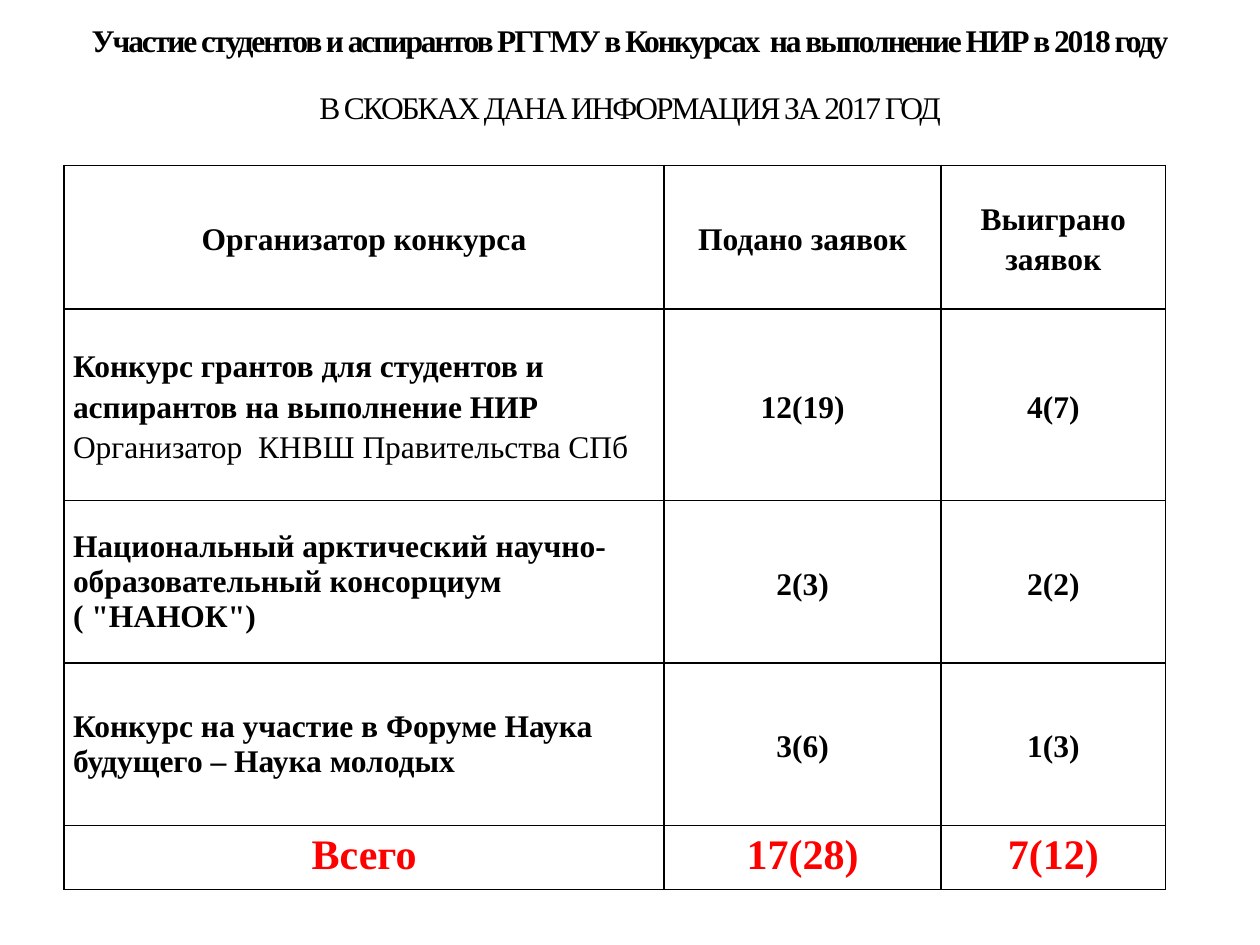
import pptx
import pptx.util
import pptx.dml.color
import pptx.enum.text
import pptx.oxml
import pptx.oxml.ns

ALIGN = pptx.enum.text.PP_ALIGN
MIDDLE = pptx.enum.text.MSO_ANCHOR.MIDDLE
TOP = pptx.enum.text.MSO_ANCHOR.TOP

WIDTHS = [4.76, 2.2, 1.78]
HEIGHTS = [1.14, 1.52, 1.29, 1.29, 0.51]
ROWS = [
    ["Организатор конкурса", "Подано заявок", "Выиграно заявок"],
    ["Конкурс грантов для студентов и аспирантов на выполнение НИР", "12(19)", "4(7)"],
    ['Национальный арктический научно-образовательный консорциум ( "НАНОК")', "2(3)", "2(2)"],
    ["Конкурс на участие в Форуме Наука будущего – Наука молодых", "3(6)", "1(3)"],
    ["Всего", "17(28)", "7(12)"],
]


def tint(code):
    return pptx.dml.color.RGBColor.from_string(code)


def write(frame, text, size=18, bold=True, color="000000", align=ALIGN.CENTER,
          line=1.15, after=0, track=0, first=True):
    para = frame.paragraphs[0] if first else frame.add_paragraph()
    para.alignment = align
    para.line_spacing = line
    para.space_before = pptx.util.Pt(0)
    para.space_after = pptx.util.Pt(after)
    run = para.add_run()
    run.text = text
    font = run.font
    font.name = "Times New Roman"
    font.size = pptx.util.Pt(size)
    font.bold = bold
    font.color.rgb = tint(color)
    if track:
        run._r.get_or_add_rPr().set("spc", str(round(track * 100)))


class Deck:
    def __init__(self, wide, high):
        self.file = pptx.Presentation()
        self.file.slide_width = pptx.util.Inches(wide)
        self.file.slide_height = pptx.util.Inches(high)
        self.slide = self.file.slides.add_slide(self.file.slide_layouts[5])
        self.edge = "000000"

    def place(self, left, top, width, height):
        wide, high = self.file.slide_width, self.file.slide_height
        return [round(left * wide), round(top * high),
                round(width * wide), round(height * high)]

    def title(self, head, note, *box):
        shape = self.slide.shapes.title
        shape.left, shape.top, shape.width, shape.height = self.place(*box)
        frame = shape.text_frame
        frame.word_wrap = True
        frame.auto_size = pptx.enum.text.MSO_AUTO_SIZE.NONE
        frame.vertical_anchor = MIDDLE
        write(frame, head, line=0.9, after=18.6, track=-1.2)
        write(frame, note, line=0.9, track=-1.2, bold=False, first=False)

    def border(self, cell):
        props = cell._tc.get_or_add_tcPr()
        space = pptx.oxml.ns.nsdecls("a")
        for spot, side in enumerate(["lnL", "lnR", "lnT", "lnB"]):
            props.insert(spot, pptx.oxml.parse_xml(
                f'<a:{side} {space} w="12700"><a:solidFill>'
                f'<a:srgbClr val="{self.edge}"/></a:solidFill></a:{side}>'))

    def table(self, rows, widths, heights, *box):
        grid = self.slide.shapes.add_table(len(rows), len(widths), *self.place(*box)).table
        for col, width in zip(grid.columns, widths):
            col.width = pptx.util.Inches(width)
        for row, height in zip(grid.rows, heights):
            row.height = pptx.util.Inches(height)
        last = len(rows) - 1
        for r, row in enumerate(rows):
            for c, text in enumerate(row):
                cell = grid.cell(r, c)
                cell.fill.background()
                self.border(cell)
                cell.margin_left = cell.margin_right = pptx.util.Inches(0.07)
                cell.margin_top = cell.margin_bottom = 0
                cell.vertical_anchor = TOP if r == last else MIDDLE
                name = c == 0 and 0 < r < last
                write(cell.text_frame, text,
                      size=24 if r == last else 18,
                      color="FF0000" if r == last else "000000",
                      align=ALIGN.LEFT if name else ALIGN.CENTER,
                      line=1.0 if name and r > 1 else 1.15)
        return grid


def main():
    deck = Deck(10, 7.5)
    deck.title("Участие студентов и аспирантов РГГМУ в Конкурсах  на выполнение НИР в 2018 году",
               "В СКОБКАХ ДАНА ИНФОРМАЦИЯ ЗА 2017 ГОД",
               0.05, 0.04, 0.9, 0.08)
    grid = deck.table(ROWS, WIDTHS, HEIGHTS, 0.051, 0.175, 0.874, 0.767)
    write(grid.cell(1, 0).text_frame, "Организатор  КНВШ Правительства СПб",
          bold=False, align=ALIGN.LEFT, first=False)
    deck.file.save("out.pptx")


if __name__ == "__main__":
    main()
